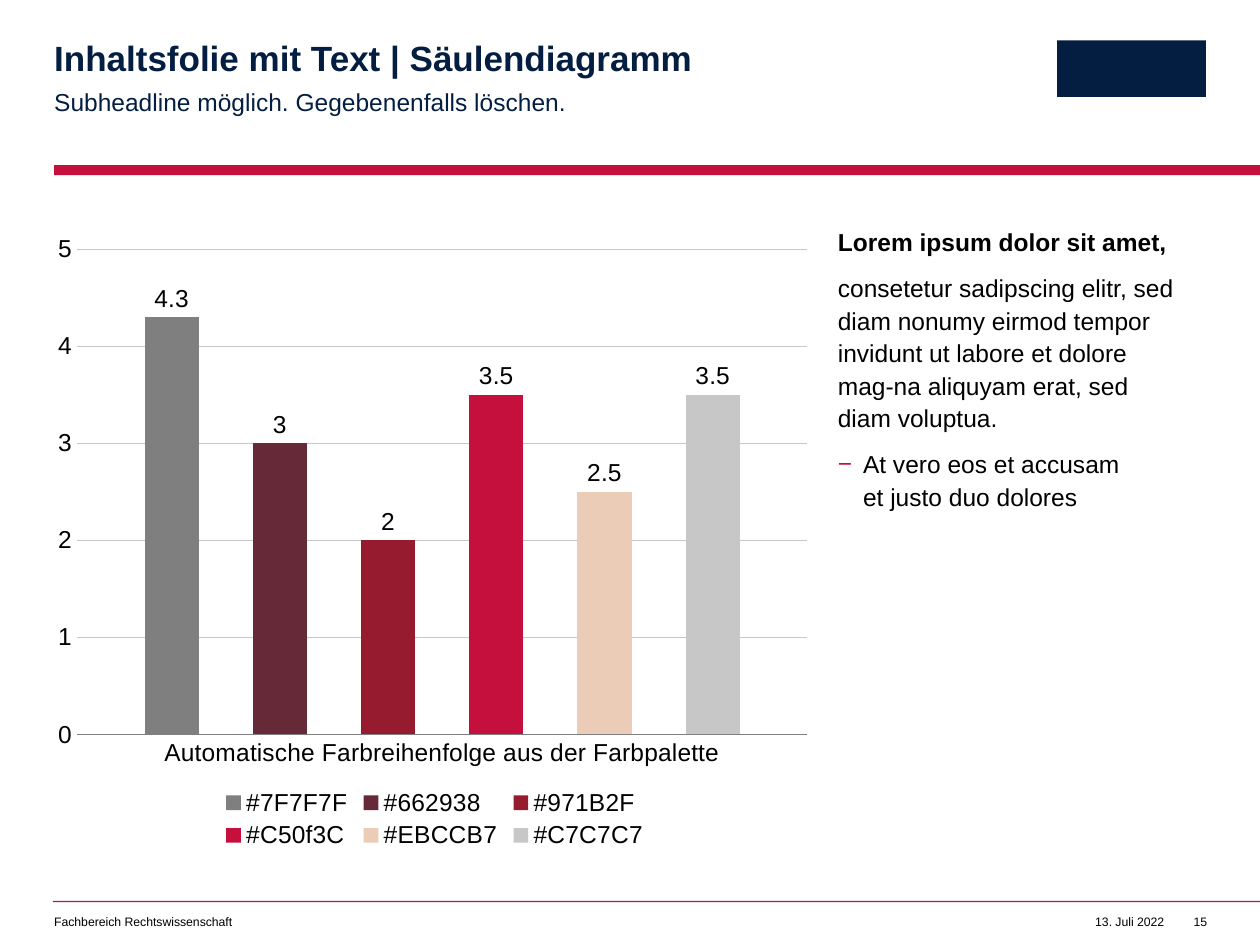
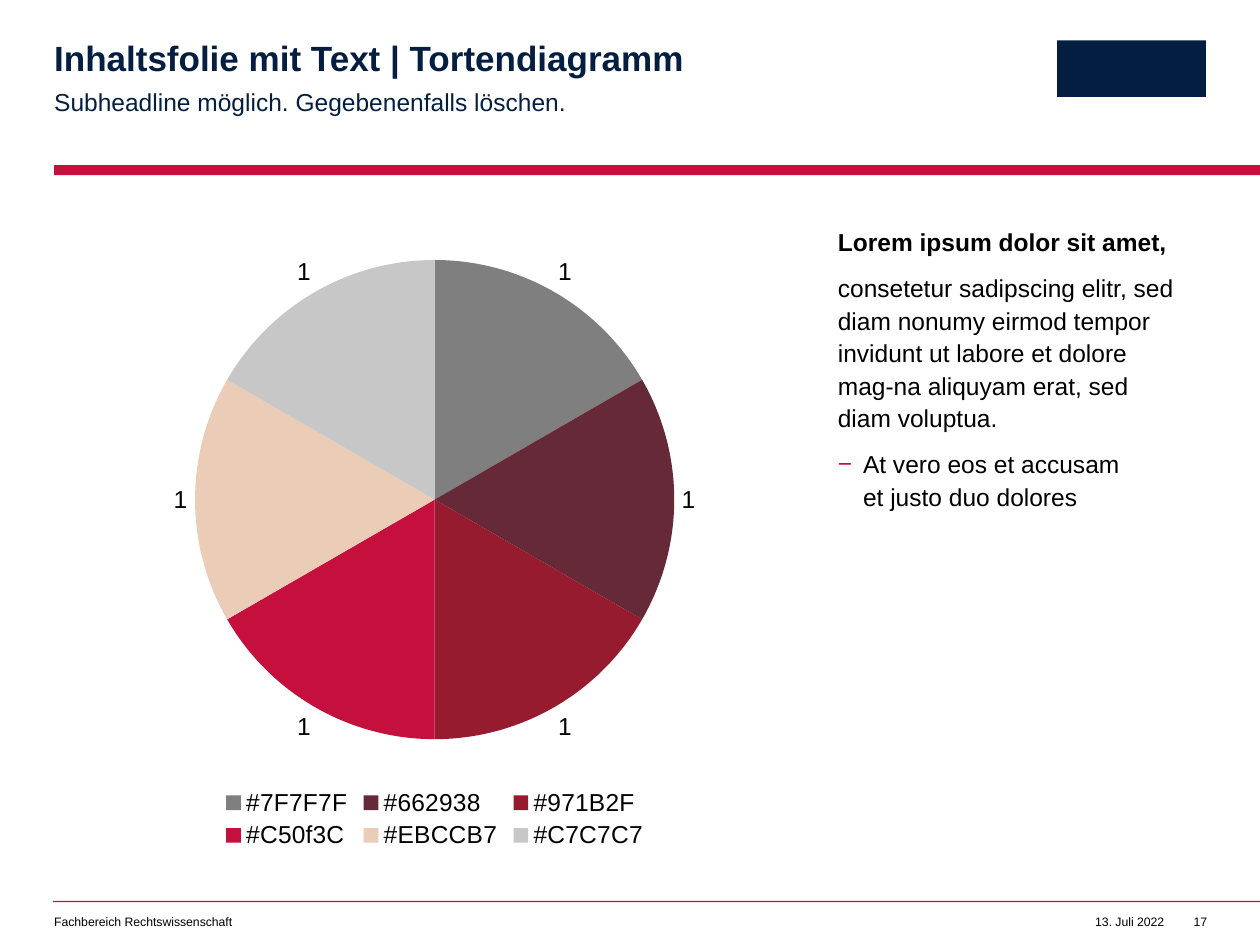
from dataclasses import dataclass

from lxml.etree import SubElement as Sub
from pptx import Presentation
from pptx.chart.data import CategoryChartData as Data
from pptx.dml.color import RGBColor as RGB
from pptx.enum.chart import XL_CHART_TYPE as Kind
from pptx.enum.chart import XL_LABEL_POSITION as Spot
from pptx.enum.chart import XL_LEGEND_POSITION as Side
from pptx.enum.chart import XL_TICK_MARK as Tick
from pptx.enum.shapes import MSO_SHAPE as Form
from pptx.enum.text import PP_ALIGN as Align
from pptx.oxml.ns import qn
from pptx.util import Inches, Pt


@dataclass(frozen=True)
class Theme:
    font: str = "Arial"
    red: str = "C50F3C"
    navy: str = "041E42"
    black: str = "000000"
    gray: str = "7F7F7F"
    pale: str = "C7C7C7"
    head: int = 20
    body: int = 14
    foot: int = 7


T = Theme()


def block(slide, box, color):
    """Add a plain filled rectangle without outline."""
    shape = slide.shapes.add_shape(Form.RECTANGLE, *map(Inches, box))
    shape.shadow.inherit = False
    shape.fill.solid()
    shape.fill.fore_color.rgb = RGB.from_string(color)
    shape.line.fill.background()


def text(slide, box, lines, inset=0, **base):
    """Add a text box; a line is (words, format), its format overriding base.

    Format keys: size, color, bold, align, space, after, bullet.
    """
    frame = slide.shapes.add_textbox(*map(Inches, box)).text_frame
    frame.word_wrap = True
    frame.margin_left = frame.margin_top = frame.margin_bottom = 0
    frame.margin_right = Inches(inset)
    for i, (words, extra) in enumerate(lines):
        fmt = {"size": T.body, "color": T.black, **base, **extra}
        para = frame.add_paragraph() if i else frame.paragraphs[0]
        para.text = words
        para.alignment = fmt.get("align", Align.LEFT)
        para.line_spacing = fmt.get("space", 1.0)
        para.space_after = Pt(fmt.get("after", 0))
        for run in para.runs:
            run.font.name = T.font
            run.font.size = Pt(fmt["size"])
            run.font.bold = fmt.get("bold", False)
            run.font.color.rgb = RGB.from_string(fmt["color"])
        for gap in para._p.findall(qn("a:br")):
            Sub(gap, qn("a:rPr"), sz=str(fmt["size"] * 100))
        if "bullet" in fmt:
            props = para._p.get_or_add_pPr()
            props.set("marL", str(Inches(0.2)))
            props.set("indent", str(Inches(-0.2)))
            tint = Sub(props, qn("a:buClr"))
            Sub(tint, qn("a:srgbClr"), val=T.red)
            Sub(props, qn("a:buFont"), typeface=T.font)
            Sub(props, qn("a:buChar"), char=fmt["bullet"])


tones = ["#7F7F7F", "#662938", "#971B2F", "#C50f3C", "#EBCCB7", "#C7C7C7"]

bars = Data()
bars.categories = ["Automatische Farbreihenfolge aus der Farbpalette"]
for tone, value in zip(tones, [4.3, 3, 2, 3.5, 2.5, 3.5]):
    bars.add_series(tone, [value])

pie = Data()
pie.categories = tones
pie.add_series("Series 1", [1] * len(tones))

copy = [
    ("Lorem ipsum dolor sit amet,", {"bold": True}),
    ("consetetur sadipscing elitr, sed diam nonumy eirmod tempor invidunt "
     "ut labore et dolore mag-na aliquyam erat, sed diam voluptua.", {}),
    ("At vero eos et accusam\vet justo duo dolores", {"bullet": "−"}),
]

deck = Presentation()
deck.slide_width, deck.slide_height = Inches(10), Inches(7.5)

for name, page, kind, data in [
    ("Säulendiagramm", "15", Kind.COLUMN_CLUSTERED, bars),
    ("Tortendiagramm", "17", Kind.PIE, pie),
]:
    slide = deck.slides.add_slide(deck.slide_layouts[6])

    # Bands, emblem block and footer
    block(slide, (0.43, 1.31, 9.57, 0.08), T.red)
    block(slide, (0.42, 7.15, 9.58, 0.01), T.red)
    block(slide, (8.39, 0.32, 1.18, 0.45), T.navy)
    for left, width, words, align in [
        (0.43, 4.49, "Fachbereich Rechtswissenschaft", Align.LEFT),
        (8.53, 0.71, "13. Juli 2022", Align.RIGHT),
        (9.38, 0.2, page, Align.RIGHT),
    ]:
        text(slide, (left, 7.26, width, 0.12), [(words, {})],
             size=T.foot, align=align)

    # Headings and body
    text(slide, (0.43, 0.33, 5.61, 0.3),
         [(f"Inhaltsfolie mit Text | {name}", {})],
         size=T.head, color=T.navy, bold=True, space=0.9)
    text(slide, (0.43, 0.67, 5.61, 0.24),
         [("Subheadline möglich. Gegebenenfalls löschen.", {})],
         inset=0.39, color=T.navy, space=1.1, after=8)
    text(slide, (6.65, 1.78, 2.93, 5), copy, inset=0.2, space=1.1, after=8)

    # Chart
    area = map(Inches, (0.43, 1.78, 6.04, 5))
    chart = slide.shapes.add_chart(kind, *area, data).chart
    chart.has_title = False
    chart.font.name = T.font
    chart.font.size = Pt(T.body)
    chart.font.color.rgb = RGB.from_string(T.black)
    chart.has_legend = True
    chart.legend.position = Side.BOTTOM
    chart.legend.include_in_layout = False

    plot = chart.plots[0]
    plot.vary_by_categories = kind == Kind.PIE
    for series in plot.series:
        tags = series.data_labels
        tags.show_value = True
        tags.position = Spot.OUTSIDE_END
        tags.font.name = T.font
        tags.font.size = Pt(T.body)
        tags.font.color.rgb = RGB.from_string(T.black)

    if kind == Kind.PIE:
        parts = [plot.series[0].points[i] for i in range(len(tones))]
    else:
        parts = plot.series
        plot.gap_width, plot.overlap = 250, -100
        cat, val = chart.category_axis, chart.value_axis
        cat.major_tick_mark = val.major_tick_mark = Tick.NONE
        val.minimum_scale, val.maximum_scale, val.major_unit = 0, 5, 1
        val.format.line.fill.background()
        for line, color in [(cat.format.line, T.gray),
                            (val.major_gridlines.format.line, T.pale)]:
            line.color.rgb = RGB.from_string(color)
            line.width = Pt(0.5)
        zone = chart._chartSpace.chart.plotArea
        for old in zone.findall(qn("c:layout")):
            zone.remove(old)
        outer = zone.makeelement(qn("c:layout"))
        zone.insert(0, outer)
        spot = Sub(outer, qn("c:manualLayout"))
        for tag, value in [("layoutTarget", "inner"), ("xMode", "edge"),
                           ("yMode", "edge"), ("x", "0.03"), ("y", "0.04"),
                           ("w", "0.96"), ("h", "0.77")]:
            Sub(spot, qn(f"c:{tag}"), val=value)

    for part, tone in zip(parts, tones):
        part.format.fill.solid()
        part.format.fill.fore_color.rgb = RGB.from_string(tone[1:].upper())

deck.save("out.pptx")
